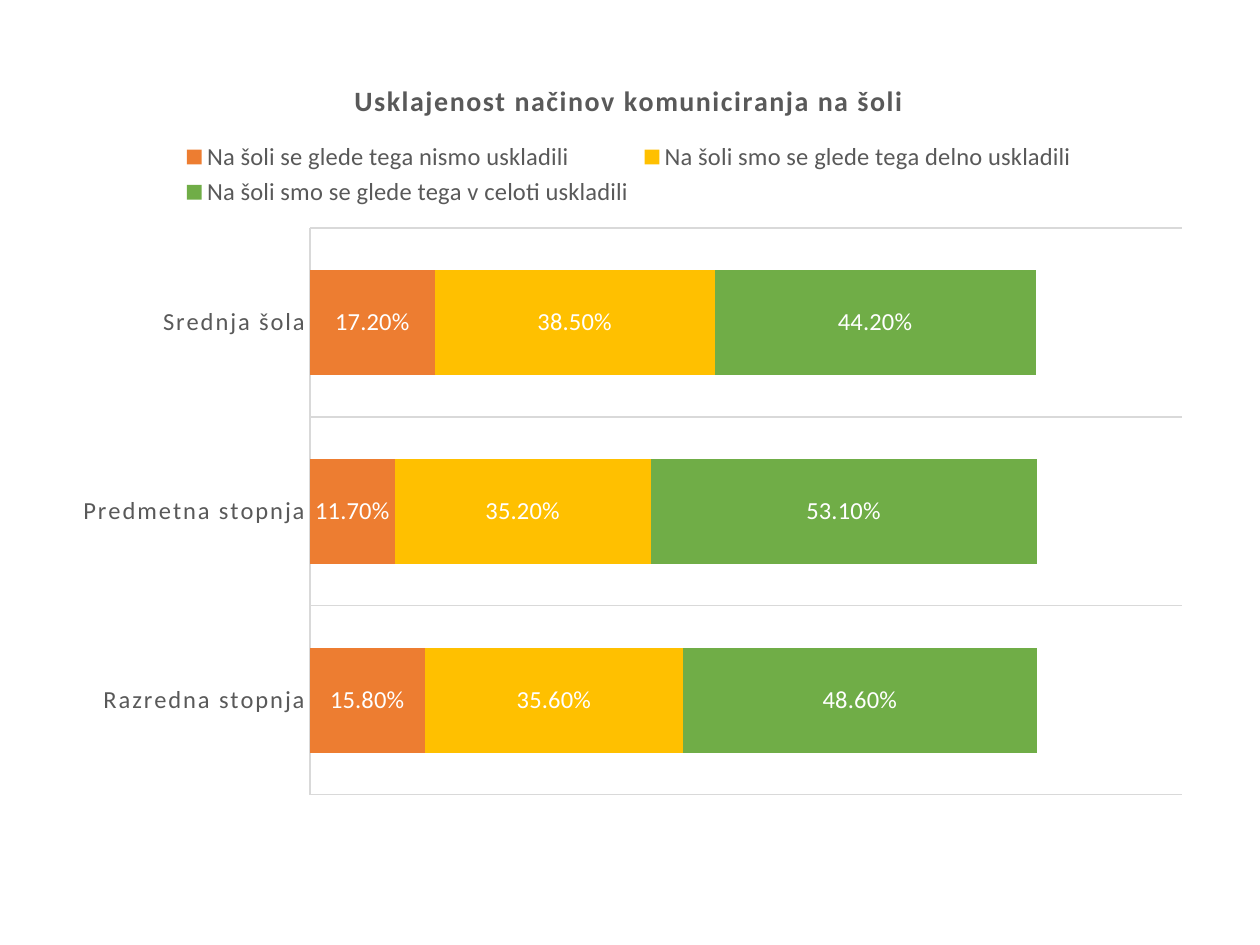
from lxml import etree
from pptx import Presentation
from pptx.chart.data import CategoryChartData
from pptx.dml.color import RGBColor
from pptx.enum.chart import (XL_CHART_TYPE, XL_LABEL_POSITION,
                             XL_LEGEND_POSITION, XL_TICK_MARK)
from pptx.oxml.ns import qn
from pptx.util import Emu, Pt

PX = 914400 // 126
BAR_STACKED = XL_CHART_TYPE.BAR_STACKED
CENTER = XL_LABEL_POSITION.CENTER
TOP = XL_LEGEND_POSITION.TOP
NO_TICK = XL_TICK_MARK.NONE
GREY, RULE, WHITE = "595959", "D9D9D9", "FFFFFF"


def rgb(value):
    return RGBColor.from_string(value)


def set_font(font, color, **values):
    for name, value in {"name": "Calibri", "size": Pt(14), "bold": False, **values}.items():
        setattr(font, name, value)
    font.color.rgb = rgb(color)


prs = Presentation()
prs.slide_width, prs.slide_height = Emu(1260 * PX), Emu(945 * PX)
s = prs.slides.add_slide(prs.slide_layouts[6])

# Chart data
data = CategoryChartData(number_format="0.00%")
data.categories = ["Razredna stopnja", "Predmetna stopnja", "Srednja šola"]
series = [
    ("Na šoli se glede tega nismo uskladili", (0.158, 0.117, 0.172), "ED7D31"),
    ("Na šoli smo se glede tega delno uskladili", (0.356, 0.352, 0.385), "FFC000"),
    ("Na šoli smo se glede tega v celoti uskladili", (0.486, 0.531, 0.442), "70AD47"),
]
for name, values, _ in series:
    data.add_series(name, values)

left, top, width, height = 54, 55, 1150, 753
chart = s.shapes.add_chart(BAR_STACKED, *(Emu(v * PX) for v in (left, top, width, height)),
                           data).chart
set_font(chart.font, "000000", size=Pt(10))

# Title with spaced letters
p = chart.chart_title.text_frame.paragraphs[0]
r = p.add_run()
r.text = "Usklajenost načinov komuniciranja na šoli"
set_font(r.font, GREY, size=Pt(16), bold=True)
r.font._element.set("spc", "100")
chart.chart_title.include_in_layout = False

# Legend
chart.has_legend = True
chart.legend.position = TOP
chart.legend.include_in_layout = False
set_font(chart.legend.font, GREY)

# Bars and their labels
plot = chart.plots[0]
plot.gap_width, plot.overlap = 79, 100
plot.vary_by_categories = False
for bar, (_, _, color) in zip(plot.series, series):
    bar.format.fill.solid()
    bar.format.fill.fore_color.rgb = rgb(color)
    labels = bar.data_labels
    for name, value in {"show_value": True, "position": CENTER, "number_format": "0.00%",
                        "number_format_is_linked": False}.items():
        setattr(labels, name, value)
    set_font(labels.font, WHITE)

# Axes
cat = chart.category_axis
cat.major_tick_mark = cat.minor_tick_mark = NO_TICK
cat.has_major_gridlines = True
for line in (cat.format.line, cat.major_gridlines.format.line):
    line.color.rgb = rgb(RULE)
    line.width = Pt(0.75)
set_font(cat.tick_labels.font, GREY)
cat.tick_labels.font._element.set("spc", "100")
val = chart.value_axis
val.minimum_scale, val.maximum_scale = 0, 1.2
val.has_major_gridlines = False
val.visible = False

# Plot area as fractions of the chart frame
area = chart._chartSpace.chart.plotArea
for old in area.findall(qn("c:layout")):
    area.remove(old)
layout = etree.Element(qn("c:layout"))
manual = etree.SubElement(layout, qn("c:manualLayout"))
for tag, value in [("layoutTarget", "inner"), ("xMode", "edge"), ("yMode", "edge"),
                   ("x", (310 - left) / width), ("y", (228 - top) / height),
                   ("w", 872 / width), ("h", 567 / height)]:
    etree.SubElement(manual, qn("c:" + tag)).set("val", str(value))
area.insert(0, layout)

prs.save("out.pptx")
